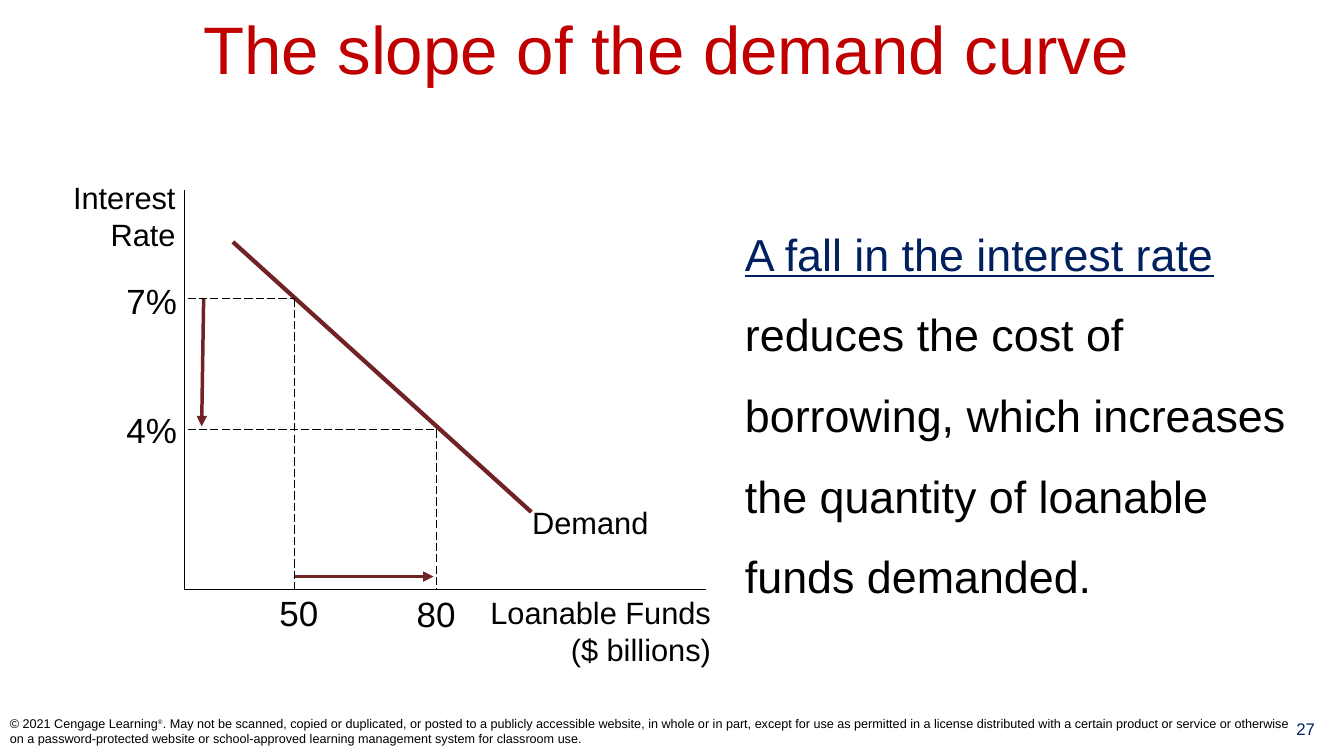
from dataclasses import dataclass

from lxml import etree
from pptx import Presentation
from pptx.dml.color import RGBColor
from pptx.enum.dml import MSO_LINE
from pptx.enum.shapes import MSO_CONNECTOR
from pptx.enum.text import MSO_ANCHOR, PP_ALIGN
from pptx.oxml.ns import qn
from pptx.util import Emu, Pt

LEFT, CENTER, RIGHT = PP_ALIGN.LEFT, PP_ALIGN.CENTER, PP_ALIGN.RIGHT
TOP, MIDDLE = MSO_ANCHOR.TOP, MSO_ANCHOR.MIDDLE
STRAIGHT = MSO_CONNECTOR.STRAIGHT
LONG_DASH = MSO_LINE.LONG_DASH

PX = 9144  # 100 px to the inch
FONT = "Arial"
COLORS = {"title": "C00000", "accent": "002060", "text": "000000", "demand": "702224"}


@dataclass(frozen=True)
class Span:
    text: str
    size: float
    color: str = "text"
    underline: bool = False
    superscript: bool = False


@dataclass(frozen=True)
class Label:
    box: tuple[int, int, int, int]
    spans: tuple[Span, ...]
    align: PP_ALIGN = LEFT
    anchor: MSO_ANCHOR = TOP
    side_inset: int = 10
    line_spacing: float = 1.0


@dataclass(frozen=True)
class Line:
    start: tuple[int, int]
    end: tuple[int, int]
    width: float = 0.75
    color: str = "text"
    dashed: bool = False
    arrow: bool = False


def rgb(name: str) -> RGBColor:
    return RGBColor.from_string(COLORS[name])


def draw_label(s, label: Label) -> None:
    tf = s.shapes.add_textbox(*(Emu(v * PX) for v in label.box)).text_frame
    tf.word_wrap = True
    tf.vertical_anchor = label.anchor
    tf.margin_left = tf.margin_right = Emu(label.side_inset * PX)
    p = tf.paragraphs[0]
    p.alignment = label.align
    p.line_spacing = label.line_spacing
    for span in label.spans:
        for i, text in enumerate(span.text.split("\n")):
            if i:
                p.add_line_break()
            r = p.add_run()
            r.text = text
            r.font.name = FONT
            r.font.size = Pt(span.size)
            r.font.color.rgb = rgb(span.color)
            r.font.underline = span.underline
            if span.superscript:
                r._r.get_or_add_rPr().set("baseline", "30000")


def draw_line(s, line: Line) -> None:
    ends = (Emu(v * PX) for v in line.start + line.end)
    c = s.shapes.add_connector(STRAIGHT, *ends)
    c.line.width = Pt(line.width)
    c.line.color.rgb = rgb(line.color)
    if line.dashed:
        c.line.dash_style = LONG_DASH
    if line.arrow:
        etree.SubElement(c.line._get_or_add_ln(), qn("a:tailEnd"), type="triangle")
    etree.SubElement(c._element.spPr, qn("a:effectLst"))


def tick(left: int, top: int, text: str) -> Label:
    return Label((left, top, 67, 52), (Span(text, 25),), CENTER, side_inset=0)


# Chart geometry
AXIS_X, AXIS_Y = 183, 585
X_50, X_80 = 292, 433
Y_7, Y_4 = 296, 426

LINES = (
    # Axes
    Line((AXIS_X, 189), (AXIS_X, AXIS_Y)),
    Line((AXIS_X, AXIS_Y), (700, AXIS_Y)),
    # Demand curve
    Line((231, 240), (527, 508), 3, "demand"),
    # Changes in rate and quantity
    Line((202, Y_7), (200, 423), 2.5, "demand", arrow=True),
    Line((X_50, 572), (430, 572), 2.5, "demand", arrow=True),
    # Guides
    *(
        Line(start, end, dashed=True)
        for x, y in ((X_50, Y_7), (X_80, Y_4))
        for start, end in (((AXIS_X + 3, y), (x, y)), ((x, y), (x, AXIS_Y)))
    ),
)

LABELS = (
    # Title and explanation
    Label((11, 11, 1300, 72), (Span("The slope of the demand curve", 48, "title"),),
          CENTER, MIDDLE),
    Label((729, 193, 558, 432), (
        Span("A fall in the interest rate ", 32, "accent", underline=True),
        Span("reduces the cost of borrowing, which increases the quantity of "
             "loanable funds demanded.", 32),
    ), line_spacing=1.5),
    # Chart labels
    Label((33, 172, 151, 83), (Span("Interest\nRate", 22),), RIGHT),
    Label((442, 584, 273, 83), (Span("Loanable Funds ($ billions)", 22),), RIGHT),
    Label((518, 495, 149, 47), (Span("Demand", 22),)),
    tick(117, 272, "7%"),
    tick(117, 400, "4%"),
    tick(263, 582, "50"),
    tick(399, 583, "80"),
    # Footer
    Label((0, 700, 1292, 50), (
        Span("© 2021 Cengage Learning", 9),
        Span("®", 8, superscript=True),
        Span(". May not be scanned, copied or duplicated, or posted to a publicly "
             "accessible website, in whole or in part, except for use as permitted in "
             "a license distributed with a certain product or service or otherwise on "
             "a password-protected website or school-approved learning management "
             "system for classroom use.", 9),
    ), anchor=MIDDLE),
    Label((1257, 708, 76, 41), (Span("27", 12, "accent"),), CENTER),
)


def main() -> None:
    prs = Presentation()
    prs.slide_width, prs.slide_height = Emu(1333 * PX), Emu(750 * PX)
    s = prs.slides.add_slide(prs.slide_layouts[6])
    for line in LINES:
        draw_line(s, line)
    for label in LABELS:
        draw_label(s, label)
    prs.save("out.pptx")


if __name__ == "__main__":
    main()
